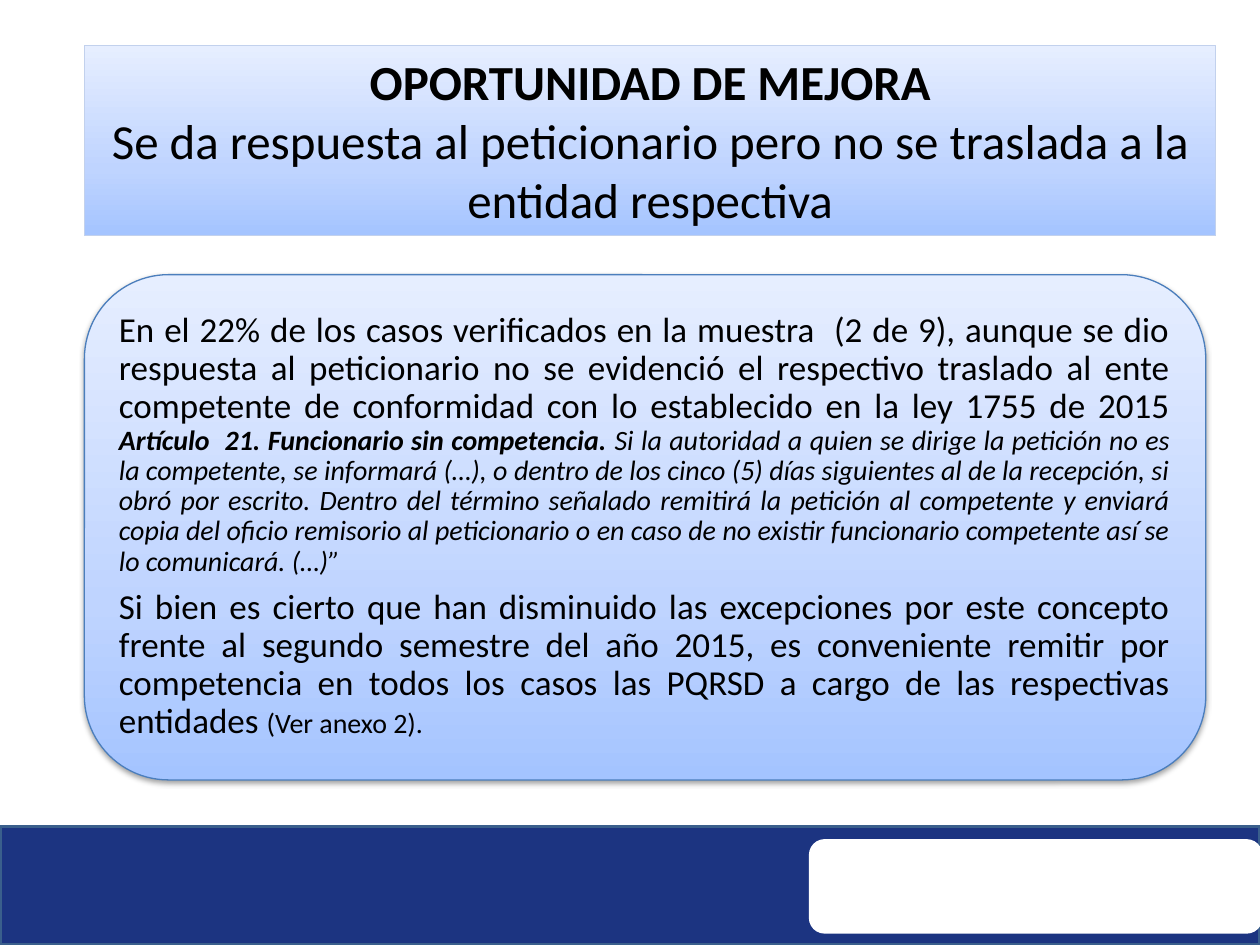
from copy import deepcopy
from dataclasses import dataclass

from lxml.etree import SubElement
from pptx import Presentation
from pptx.dml.color import RGBColor
from pptx.enum.shapes import MSO_SHAPE
from pptx.enum.text import MSO_ANCHOR, MSO_AUTO_SIZE, PP_ALIGN
from pptx.oxml.ns import qn
from pptx.util import Pt

FONT = "Calibri"
GRADIENT = [(0, "A4C4FF"), (0.35, "BFD4FF"), (1, "E6EEFF")]


@dataclass
class Box:
    left: float
    top: float
    width: float
    height: float

    def lengths(self):
        return [Pt(value) for value in (self.left, self.top, self.width, self.height)]


@dataclass
class Panel:
    box: Box
    kind: MSO_SHAPE
    fill: str | None
    line: str | None
    line_width: float = 0.75


def color(value: str) -> RGBColor:
    return RGBColor.from_string(value)


def place(shape, box: Box) -> None:
    shape.left, shape.top, shape.width, shape.height = box.lengths()


def paint_gradient(shape) -> None:
    """Fill from dark at the bottom to light at the top."""
    shape.fill.gradient()
    shape.fill.gradient_angle = 90
    stop_list = shape._element.spPr.find(qn("a:gradFill")).find(qn("a:gsLst"))
    while len(stop_list) < len(GRADIENT):
        stop_list.append(deepcopy(stop_list[0]))
    for stop, (position, value) in zip(shape.fill.gradient_stops, GRADIENT):
        stop.position = position
        stop.color.rgb = color(value)


def outline(shape, value: str, width: float) -> None:
    shape.line.color.rgb = color(value)
    shape.line.width = Pt(width)


def add_panel(slide, panel: Panel):
    shape = slide.shapes.add_shape(panel.kind, *panel.box.lengths())
    shape.shadow.inherit = False
    if panel.fill:
        shape.fill.solid()
        shape.fill.fore_color.rgb = color(panel.fill)
    else:
        paint_gradient(shape)
    if panel.line:
        outline(shape, panel.line, panel.line_width)
    else:
        shape.line.fill.background()
    return shape


def add_shadow(shape) -> None:
    effects = shape._element.spPr.find(qn("a:effectLst"))
    shadow = SubElement(effects, qn("a:outerShdw"), blurRad=str(Pt(3.1)),
                        dist=str(Pt(1.6)), dir="5400000", rotWithShape="0")
    shade = SubElement(shadow, qn("a:srgbClr"), val="000000")
    SubElement(shade, qn("a:alpha"), val="38000")


def add_run(paragraph, text: str, *, size: float, bold: bool = False,
            italic: bool = False) -> None:
    run = paragraph.add_run()
    run.text = text
    run.font.name = FONT
    run.font.size = Pt(size)
    run.font.bold = bold
    run.font.italic = italic
    run.font.color.rgb = color("000000")


def write(shape, paragraphs: list, *, align: PP_ALIGN, anchor: MSO_ANCHOR,
          spacing: float = 1.0, after: float = 0) -> None:
    """Write paragraphs, each a list of (text, run format) pairs."""
    frame = shape.text_frame
    frame.word_wrap = True
    frame.auto_size = MSO_AUTO_SIZE.NONE
    frame.vertical_anchor = anchor
    for index, runs in enumerate(paragraphs):
        paragraph = frame.add_paragraph() if index else frame.paragraphs[0]
        properties = paragraph._p.get_or_add_pPr()
        properties.set("marL", "0")
        properties.set("indent", "0")
        SubElement(properties, qn("a:buNone"))
        paragraph.alignment = align
        paragraph.line_spacing = spacing
        paragraph.space_before = Pt(0)
        paragraph.space_after = Pt(after)
        for text, style in runs:
            add_run(paragraph, text, **style)


TITLE_BOX = Box(48.24, 25.92, 646.56, 108.72)
BODY_BOX = Box(61.92, 170.64, 612.72, 260.64)
FOOTER = Panel(Box(0, 472.32, 720, 67.68), MSO_SHAPE.RECTANGLE, "1C3481", "3A5F8C", 2)
FOOTER_LABEL = Panel(Box(462.24, 479.52, 259.2, 54), MSO_SHAPE.ROUNDED_RECTANGLE,
                     "FFFFFF", None)
CARD = Panel(Box(48.24, 156.96, 640.8, 288.72), MSO_SHAPE.ROUNDED_RECTANGLE,
             None, "4B7EBC")

TITLE = [
    [("OPORTUNIDAD DE MEJORA", dict(size=28, bold=True))],
    [("Se da respuesta al peticionario pero no se traslada a la entidad respectiva",
      dict(size=28))],
]
BODY = [
    [("En el 22% de los casos verificados en la muestra  (2 de 9), aunque se dio "
      "respuesta al peticionario no se evidenció el respectivo traslado al ente "
      "competente de conformidad con lo establecido en la ley 1755 de 2015 ",
      dict(size=20)),
     ("Artículo  21. Funcionario sin competencia. ",
      dict(size=16, bold=True, italic=True)),
     ("Si la autoridad a quien se dirige la petición no es la competente, se "
      "informará (…), o dentro de los cinco (5) días siguientes al de la recepción, "
      "si obró por escrito. Dentro del término señalado remitirá la petición al "
      "competente y enviará copia del oficio remisorio al peticionario o en caso de "
      "no existir funcionario competente así se lo comunicará. (…)”",
      dict(size=16, italic=True))],
    [("Si bien es cierto que han disminuido las excepciones por este concepto frente "
      "al segundo semestre del año 2015, es conveniente remitir por competencia en "
      "todos los casos las PQRSD a cargo de las respectivas entidades ",
      dict(size=20)),
     ("(Ver anexo 2).", dict(size=16))],
]


def main() -> None:
    presentation = Presentation()
    presentation.slide_width, presentation.slide_height = Pt(720), Pt(540)
    slide = presentation.slides.add_slide(presentation.slide_layouts[1])
    title, body = slide.shapes.title, slide.placeholders[1]

    # Title band
    place(title, TITLE_BOX)
    paint_gradient(title)
    outline(title, "C2D1ED", 0.75)
    write(title, TITLE, align=PP_ALIGN.CENTER, anchor=MSO_ANCHOR.TOP)

    # Footer
    for panel in (FOOTER, FOOTER_LABEL):
        add_panel(slide, panel)

    # Card, with the body text brought in front of it
    card = add_panel(slide, CARD)
    add_shadow(card)
    card._element.addnext(body._element)
    place(body, BODY_BOX)
    frame = body.text_frame
    frame.margin_left = frame.margin_right = Pt(6)
    frame.margin_top = frame.margin_bottom = Pt(6)
    write(body, BODY, align=PP_ALIGN.JUSTIFY, anchor=MSO_ANCHOR.MIDDLE,
          spacing=0.9, after=7)

    presentation.save("out.pptx")


if __name__ == "__main__":
    main()
